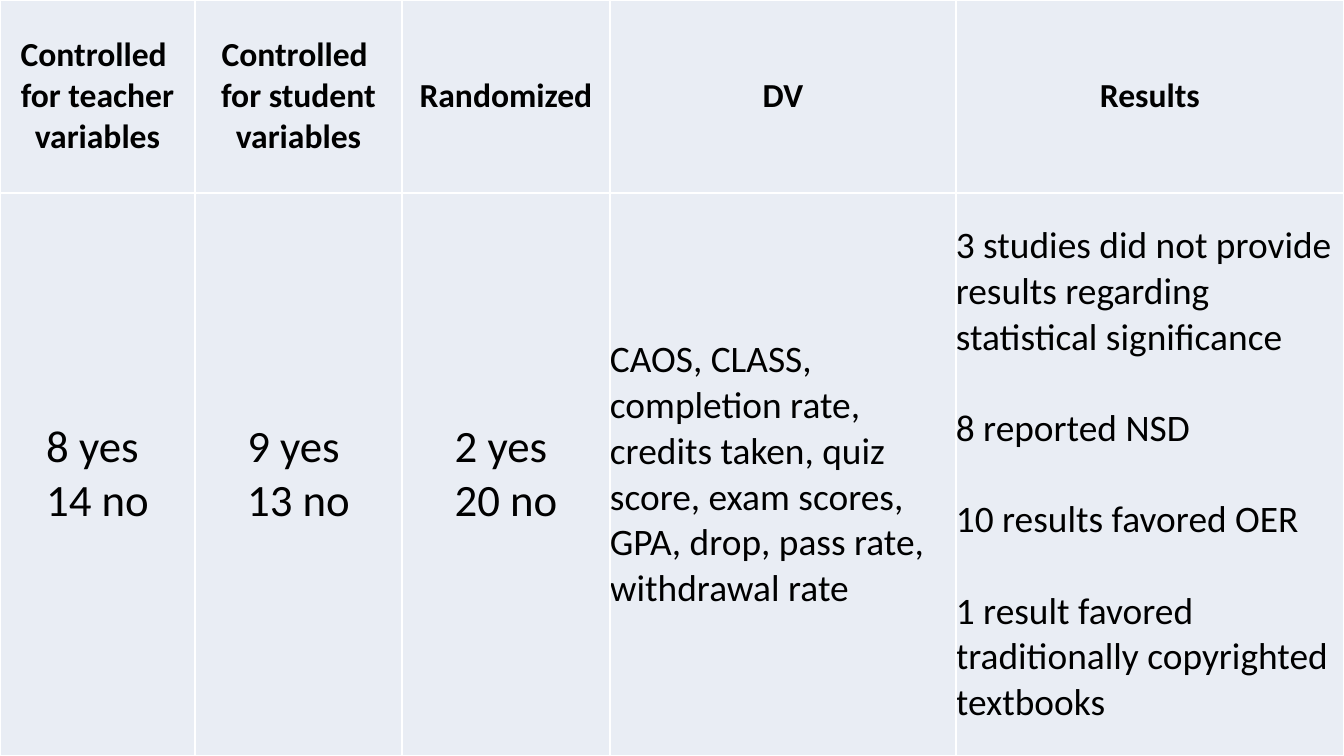
import pptx
import pptx.dml.color
import pptx.enum.text
import pptx.oxml.ns
import pptx.util
from lxml import etree

EMU_PER_PX = 9144000 / 1344
COLORS = {"text": "000000", "cell": "E9EDF4", "border": "FFFFFF"}
ALIGN = pptx.enum.text.PP_ALIGN

COLUMN_WIDTHS = [195, 207, 208, 346, 388]
ROW_HEIGHTS = [193, 563]

HEADINGS = [
    "Controlled \nfor teacher variables",
    "Controlled \nfor student variables",
    "Randomized",
    "DV",
    "Results",
]
COUNTS = ["8 yes \n14 no", "9 yes \n13 no", "2 yes \n20 no"]
DEPENDENT_VARIABLES = [
    "CAOS, CLASS, completion rate, credits taken, quiz score, "
    "exam scores, GPA, drop, pass rate, withdrawal rate",
]
RESULTS = [
    "3 studies did not provide results regarding statistical significance",
    "8 reported NSD",
    "10 results favored OER",
    "1 result favored traditionally copyrighted textbooks",
]


def px(length):
    return pptx.util.Emu(round(length * EMU_PER_PX))


def rgb(name):
    return pptx.dml.color.RGBColor.from_string(COLORS[name])


class SlideBuilder:
    font = "Calibri"
    border_width = pptx.util.Pt(1)

    def __init__(self, slide):
        self.slide = slide

    def table(self, left, top, widths, heights):
        frame = self.slide.shapes.add_table(
            len(heights), len(widths),
            px(left), px(top), px(sum(widths)), px(sum(heights)))
        table = frame.table
        table.first_row = table.horz_banding = False
        for column, width in zip(table.columns, widths):
            column.width = px(width)
        for row, height in zip(table.rows, heights):
            row.height = px(height)
        return table

    def borders(self, cell):
        properties = cell._tc.get_or_add_tcPr()
        qn = pptx.oxml.ns.qn
        for side in "LRTB":
            line = etree.SubElement(properties, qn(f"a:ln{side}"), w=str(self.border_width))
            fill = etree.SubElement(line, qn("a:solidFill"))
            etree.SubElement(fill, qn("a:srgbClr"), val=COLORS["border"])

    def cell(self, cell, paragraphs, size, align, bold=False, gap=0):
        """Style a cell and fill it, with gap points between paragraphs."""
        self.borders(cell)
        cell.fill.solid()
        cell.fill.fore_color.rgb = rgb("cell")
        cell.vertical_anchor = pptx.enum.text.MSO_ANCHOR.MIDDLE
        cell.margin_left = cell.margin_right = cell.margin_top = cell.margin_bottom = 0
        for index, text in enumerate(paragraphs):
            if index:
                paragraph = cell.text_frame.add_paragraph()
                paragraph.space_before = pptx.util.Pt(gap)
            else:
                paragraph = cell.text_frame.paragraphs[0]
            paragraph.alignment = align
            self.lines(paragraph, text, size, bold)

    def lines(self, paragraph, text, size, bold):
        for index, line in enumerate(text.split("\n")):
            if index:
                paragraph.add_line_break()
            run = paragraph.add_run()
            run.text = line
            run.font.name = self.font
            run.font.size = pptx.util.Pt(size)
            run.font.bold = bold
            run.font.color.rgb = rgb("text")


def main():
    presentation = pptx.Presentation()
    presentation.slide_width = px(sum(COLUMN_WIDTHS))
    presentation.slide_height = px(sum(ROW_HEIGHTS))
    builder = SlideBuilder(presentation.slides.add_slide(presentation.slide_layouts[6]))

    summary = builder.table(0, 0, COLUMN_WIDTHS, ROW_HEIGHTS)
    for column, heading in enumerate(HEADINGS):
        builder.cell(summary.cell(0, column), [heading], 18, ALIGN.CENTER, bold=True)
    for column, count in enumerate(COUNTS):
        builder.cell(summary.cell(1, column), [count], 24, ALIGN.CENTER)
    for column, findings in enumerate([DEPENDENT_VARIABLES, RESULTS], len(COUNTS)):
        builder.cell(summary.cell(1, column), findings, 20, ALIGN.LEFT, gap=24.4)

    presentation.save("out.pptx")


if __name__ == "__main__":
    main()
